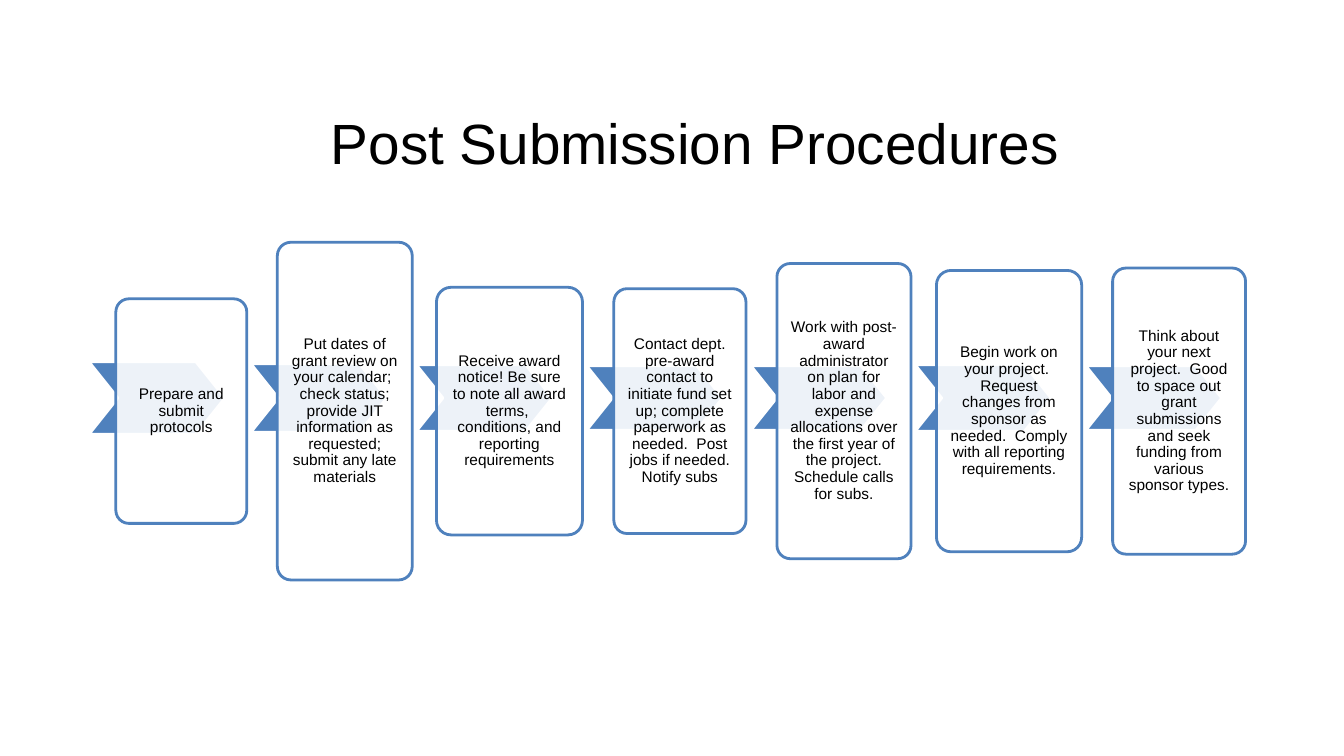
import dataclasses

import lxml.etree
import pptx
import pptx.dml.color
import pptx.enum.shapes
import pptx.enum.text
import pptx.oxml.ns
import pptx.util

Cm, Pt = pptx.util.Cm, pptx.util.Pt
RGB = pptx.dml.color.RGBColor.from_string
SHAPE = pptx.enum.shapes.MSO_SHAPE
ANCHOR = pptx.enum.text.MSO_ANCHOR


@dataclasses.dataclass(frozen=True)
class Theme:
    font: str = "Arial"
    text: str = "000000"
    accent: str = "4F81BD"
    paper: str = "FFFFFF"
    title_size: float = 40.5
    body_size: float = 11
    line_width: float = 2


# Left of chevron, height of chevron, then left, width and height of box (cm)
STEPS = [
    (2.24, 1.83, 2.92, 3.30, 5.66, "Prepare and submit protocols"),
    (6.32, 1.73, 6.99, 3.40, 8.51,
     "Put dates of grant review on your calendar;  check status; provide JIT "
     "information as requested; submit any late materials"),
    (10.49, 1.68, 11.00, 3.68, 6.24,
     "Receive award notice! Be sure to note all award terms,  conditions, "
     "and reporting requirements"),
    (14.78, 1.63, 15.47, 3.33, 6.17,
     "Contact dept. pre-award contact to initiate fund set up; complete "
     "paperwork as needed.  Post jobs if needed. Notify subs"),
    (18.92, 1.63, 19.58, 3.38, 7.44,
     "Work with post-award administrator on plan for labor and expense "
     "allocations over the first year of the project. Schedule calls for subs."),
    (23.06, 1.68, 23.60, 3.66, 7.09,
     "Begin work on your project.  Request changes from sponsor as needed.  "
     "Comply with all reporting requirements."),
    (27.36, 1.63, 28.04, 3.35, 7.21,
     "Think about your next project.  Good to space out grant submissions "
     "and seek funding from various sponsor types."),
]
CHEVRON_WIDTH = 3.43
CHEVRON_MIDDLE = 10.03
BOX_MIDDLE = 10.36


def write_text(sp, text, *, theme, size, anchor, inset=0.0, spacing=1.0):
    tf = sp.text_frame
    tf.word_wrap = True
    tf.vertical_anchor = anchor
    tf.margin_left = tf.margin_right = Cm(inset)
    tf.margin_top = tf.margin_bottom = Cm(inset)
    p = tf.paragraphs[0]
    p.alignment = pptx.enum.text.PP_ALIGN.CENTER
    p.line_spacing = spacing
    r = p.add_run()
    r.text = text
    r.font.name = theme.font
    r.font.size = Pt(size)
    r.font.color.rgb = RGB(theme.text)


class ProcessSlide:
    def __init__(self, prs, theme):
        self.theme = theme
        self.slide = prs.slides.add_slide(prs.slide_layouts[6])

    def title(self, text, left, top, width, height):
        sp = self.slide.shapes.add_textbox(Cm(left), Cm(top), Cm(width), Cm(height))
        write_text(sp, text, theme=self.theme, size=self.theme.title_size,
                   anchor=ANCHOR.TOP)

    def shape(self, kind, left, middle, width, height, adj, fill, line):
        """Add a preset shape centred vertically on middle."""
        sp = self.slide.shapes.add_shape(
            kind, Cm(left), Cm(middle - height / 2), Cm(width), Cm(height))
        sp.adjustments[0] = adj
        sp.shadow.inherit = False
        sp.fill.solid()
        sp.fill.fore_color.rgb = RGB(fill)
        sp.line.color.rgb = RGB(line)
        sp.line.width = Pt(self.theme.line_width)
        return sp

    def chevron(self, left, height):
        self.shape(SHAPE.CHEVRON, left, CHEVRON_MIDDLE, CHEVRON_WIDTH, height,
                   0.4, self.theme.accent, self.theme.paper)

    def box(self, left, width, height, text):
        sp = self.shape(SHAPE.ROUNDED_RECTANGLE, left, BOX_MIDDLE, width, height,
                        0.1, self.theme.paper, self.theme.accent)
        qn = pptx.oxml.ns.qn
        color = sp.fill._xPr.find(qn("a:solidFill")).find(qn("a:srgbClr"))
        lxml.etree.SubElement(color, qn("a:alpha")).set("val", "90000")
        write_text(sp, text, theme=self.theme, size=self.theme.body_size,
                   anchor=ANCHOR.MIDDLE, inset=0.23, spacing=0.9)


def main():
    prs = pptx.Presentation()
    prs.slide_width, prs.slide_height = Cm(33.87), Cm(19.05)
    s = ProcessSlide(prs, Theme())
    s.title("Post Submission Procedures", 5.97, 2.72, 23.1, 2.92)
    for chevron_left, chevron_height, left, width, height, text in STEPS:
        s.chevron(chevron_left, chevron_height)
        s.box(left, width, height, text)
    prs.save("out.pptx")


if __name__ == "__main__":
    main()
